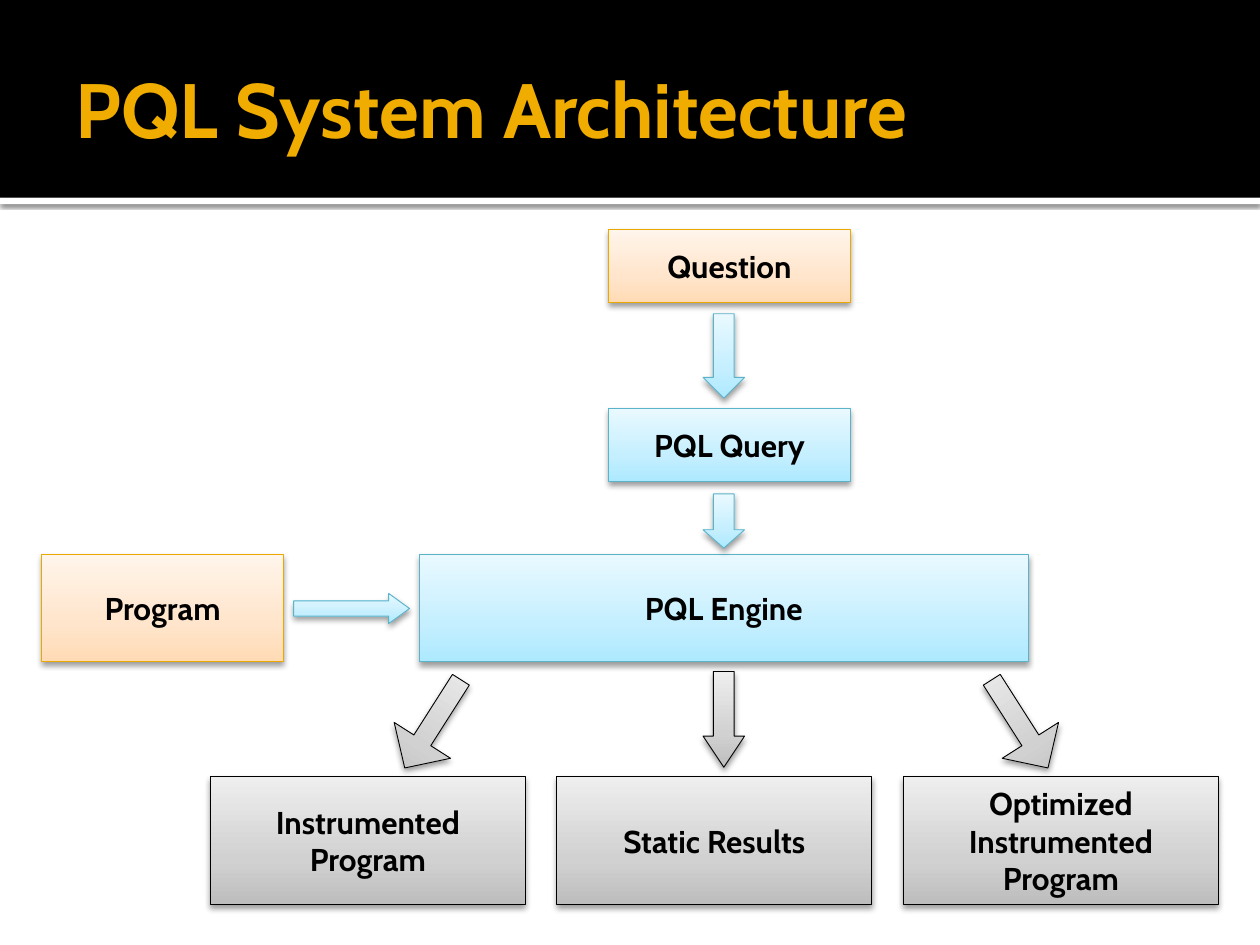
from copy import deepcopy
from dataclasses import dataclass

from lxml.etree import SubElement
from pptx import Presentation
from pptx.dml.color import RGBColor
from pptx.enum.shapes import MSO_SHAPE
from pptx.enum.text import MSO_ANCHOR, PP_ALIGN
from pptx.oxml.ns import qn
from pptx.util import Inches, Pt

BLACK = RGBColor(0x00, 0x00, 0x00)
WHITE = RGBColor(0xFF, 0xFF, 0xFF)
GOLD = RGBColor(0xF0, 0xAD, 0x00)
FONT = "Cabin"


@dataclass(frozen=True)
class Palette:
    line: RGBColor
    bottom: RGBColor
    middle: RGBColor
    top: RGBColor


INPUT = Palette(RGBColor(0xEB, 0xA9, 0x00), RGBColor(0xFF, 0xDB, 0xB5),
                RGBColor(0xFF, 0xE5, 0xCB), RGBColor(0xFF, 0xF5, 0xEB))
PQL = Palette(RGBColor(0x5B, 0xB3, 0xCA), RGBColor(0xAD, 0xE9, 0xFF),
              RGBColor(0xC5, 0xEF, 0xFF), RGBColor(0xE9, 0xF9, 0xFF))
OUTPUT = Palette(BLACK, RGBColor(0xBD, 0xBD, 0xBD),
                 RGBColor(0xD1, 0xD1, 0xD1), RGBColor(0xEE, 0xEE, 0xEE))


@dataclass(frozen=True)
class Box:
    label: str
    left: float
    top: float
    width: float
    height: float
    palette: Palette


@dataclass(frozen=True)
class Arrow:
    left: float
    top: float
    width: float
    height: float
    palette: Palette
    head: float
    shaft: float = 0.5
    rotation: float = 0
    kind: MSO_SHAPE = MSO_SHAPE.DOWN_ARROW


def add_shadow(shape, opacity: int, blur: float, distance: float) -> None:
    shape.shadow.inherit = False
    effects = shape.element.spPr.find(qn("a:effectLst"))
    shadow = SubElement(effects, qn("a:outerShdw"), blurRad=str(Pt(blur)),
                        dist=str(Pt(distance)), dir="5400000", rotWithShape="0")
    color = SubElement(shadow, qn("a:srgbClr"), val=str(BLACK))
    SubElement(color, qn("a:alpha"), val=str(opacity * 1000))


def add_shape(slide, kind: MSO_SHAPE, left: float, top: float, width: float, height: float):
    return slide.shapes.add_shape(kind, Inches(left), Inches(top), Inches(width), Inches(height))


def add_band(slide, top: float, height: float, color: RGBColor):
    band = add_shape(slide, MSO_SHAPE.RECTANGLE, 0, top, 10, height)
    band.fill.solid()
    band.fill.fore_color.rgb = color
    band.line.fill.background()
    band.shadow.inherit = False
    return band


def apply_palette(shape, palette: Palette) -> None:
    shape.fill.gradient()
    shape.fill.gradient_angle = 90
    stop_list = shape.element.spPr.find(".//" + qn("a:gsLst"))
    stop_list.insert(1, deepcopy(stop_list[0]))
    colors = (palette.bottom, palette.middle, palette.top)
    for stop, color, position in zip(shape.fill.gradient_stops, colors, (0, 0.35, 1)):
        stop.color.rgb = color
        stop.position = position
    shape.line.color.rgb = palette.line
    shape.line.width = Pt(0.5)
    add_shadow(shape, 38, 3.5, 2)


def write_text(shape, text: str, *, size: float, color: RGBColor, align: PP_ALIGN) -> None:
    frame = shape.text_frame
    frame.word_wrap = True
    frame.vertical_anchor = MSO_ANCHOR.MIDDLE
    paragraph = frame.paragraphs[0]
    paragraph.alignment = align
    run = paragraph.add_run()
    run.text = text
    run.font.name = FONT
    run.font.size = Pt(size)
    run.font.bold = True
    run.font.color.rgb = color


def draw_box(slide, box: Box) -> None:
    shape = add_shape(slide, MSO_SHAPE.RECTANGLE, box.left, box.top, box.width, box.height)
    apply_palette(shape, box.palette)
    write_text(shape, box.label, size=18, color=BLACK, align=PP_ALIGN.CENTER)


def draw_arrow(slide, arrow: Arrow) -> None:
    shape = add_shape(slide, arrow.kind, arrow.left, arrow.top, arrow.width, arrow.height)
    shape.adjustments[0] = arrow.shaft
    shape.adjustments[1] = arrow.head
    shape.rotation = arrow.rotation
    apply_palette(shape, arrow.palette)


def draw_header(slide) -> None:
    rule = add_band(slide, 1.57, 0.05, WHITE)
    add_shadow(rule, 60, 2.5, 0.8)
    add_band(slide, 0, 1.57, BLACK)
    title = slide.shapes.add_textbox(Inches(0.5), Inches(0.17), Inches(9), Inches(1.37))
    title.text_frame.margin_right = Inches(0.05)
    write_text(title, "PQL System Architecture", size=44, color=GOLD, align=PP_ALIGN.LEFT)


def main() -> None:
    presentation = Presentation()
    presentation.slide_width = Inches(10)
    presentation.slide_height = Inches(7.5)
    slide = presentation.slides.add_slide(presentation.slide_layouts[6])
    draw_header(slide)

    # Question, query, program and engine
    boxes = [
        Box("Question", 4.83, 1.82, 1.92, 0.58, INPUT),
        Box("Program", 0.33, 4.4, 1.92, 0.85, INPUT),
        Box("PQL Query", 4.83, 3.24, 1.92, 0.58, PQL),
        Box("PQL Engine", 3.33, 4.4, 4.83, 0.85, PQL),
    ]
    # Results, in a row with equal gaps
    results = ("Instrumented Program", "Static Results", "Optimized Instrumented Program")
    boxes += [Box(label, 1.67 + 2.75 * column, 6.16, 2.5, 1.02, OUTPUT)
              for column, label in enumerate(results)]

    # Flow into the engine, then out to each result
    arrows = [
        Arrow(5.58, 2.49, 0.33, 0.67, PQL, head=0.5),
        Arrow(5.58, 3.92, 0.33, 0.43, PQL, head=0.44),
        Arrow(2.33, 4.71, 0.92, 0.24, PQL, head=0.69, kind=MSO_SHAPE.RIGHT_ARROW),
        Arrow(3.17, 5.33, 0.53, 0.83, OUTPUT, head=0.49, shaft=0.3, rotation=32.5),
        Arrow(5.58, 5.33, 0.33, 0.76, OUTPUT, head=0.75),
        Arrow(7.83, 5.33, 0.53, 0.83, OUTPUT, head=0.49, shaft=0.3, rotation=327.5),
    ]
    for box in boxes:
        draw_box(slide, box)
    for arrow in arrows:
        draw_arrow(slide, arrow)

    presentation.save("out.pptx")


if __name__ == "__main__":
    main()
